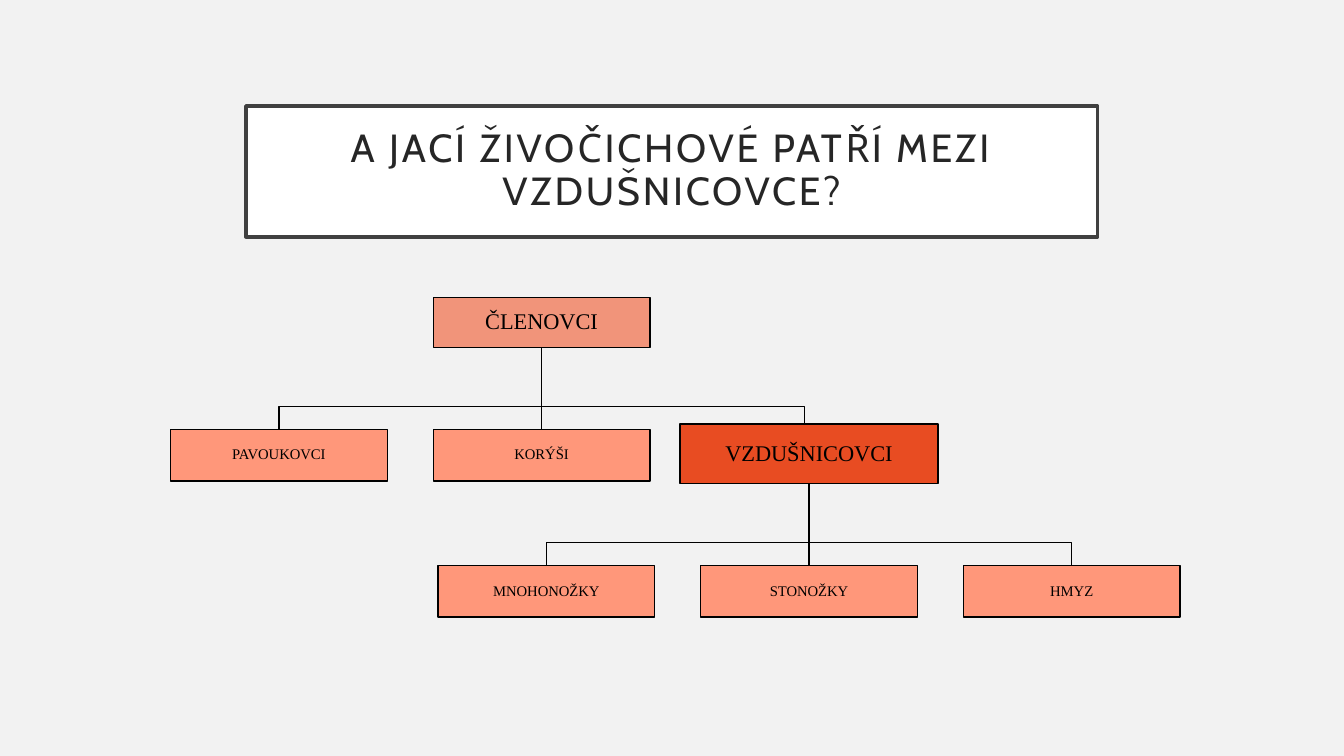
from pptx import Presentation
from pptx.dml.color import RGBColor
from pptx.enum.shapes import MSO_CONNECTOR, MSO_SHAPE
from pptx.enum.text import MSO_ANCHOR, MSO_AUTO_SIZE, PP_ALIGN
from pptx.oxml.ns import qn
from pptx.util import Cm, Pt
from lxml import etree

RECT = MSO_SHAPE.RECTANGLE
STRAIGHT = MSO_CONNECTOR.STRAIGHT
MIDDLE = MSO_ANCHOR.MIDDLE
CENTER = PP_ALIGN.CENTER
NO_FIT = MSO_AUTO_SIZE.NONE

TITLE = "A JACÍ ŽIVOČICHOVÉ PATŘÍ MEZI VZDUŠNICOVCE?"
TREES = [
    {"root": "ČLENOVCI", "fill": "F1947A", "center": 13.65, "top": 7.49,
     "size": (5.46, 1.27), "children": ["PAVOUKOVCI", "KORÝŠI", None]},
    {"root": "VZDUŠNICOVCI", "fill": "E84C22", "center": 20.39, "top": 10.69,
     "size": (6.5, 1.5), "children": ["MNOHONOŽKY", "STONOŽKY", "HMYZ"]},
]
CHILD_FILL = "FF977A"
CHILD_W, CHILD_H = 5.46, 1.3
STEP = 6.62
BUS_DROP, CHILD_DROP = 1.48, 2.06


def color(value):
    return RGBColor.from_string(value)


def style_line(line, value="000000", width=1):
    line.color.rgb = color(value)
    line.width = Pt(width)


def style_text(sp, text, font, size, value, inset):
    tf = sp.text_frame
    tf.word_wrap = True
    tf.auto_size = NO_FIT
    tf.vertical_anchor = MIDDLE
    tf.margin_left = tf.margin_right = Cm(inset)
    tf.margin_top = tf.margin_bottom = Cm(inset)
    p = tf.paragraphs[0]
    p.text = text
    p.alignment = CENTER
    p.line_spacing = 0.9
    p.font.name = font
    p.font.size = Pt(size)
    p.font.color.rgb = color(value)
    return p


def add_box(s, text, center, top, width, height, fill, size):
    sp = s.shapes.add_shape(RECT, Cm(center - width / 2), Cm(top), Cm(width), Cm(height))
    sp.shadow.inherit = False
    sp.fill.solid()
    sp.fill.fore_color.rgb = color(fill)
    style_line(sp.line)
    style_text(sp, text, "Times New Roman", size, "000000", 0.03)


def add_branch(s, x, child_x, y):
    if child_x == x:
        sp = s.shapes.add_connector(STRAIGHT, Cm(x), Cm(y), Cm(x), Cm(y + CHILD_DROP))
        etree.SubElement(sp._element.spPr, qn("a:effectLst"))
    else:
        bus = Cm(y + BUS_DROP)
        builder = s.shapes.build_freeform(Cm(x), Cm(y))
        builder.add_line_segments(
            [(Cm(x), bus), (Cm(child_x), bus), (Cm(child_x), Cm(y + CHILD_DROP))],
            close=False)
        sp = builder.convert_to_shape()
        sp.shadow.inherit = False
        sp.fill.background()
    style_line(sp.line)


def add_tree(s, tree):
    x, top = tree["center"], tree["top"]
    width, height = tree["size"]
    bottom = top + height
    children = [(name, x + (i - 1) * STEP) for i, name in enumerate(tree["children"])]
    for _, child_x in children:
        add_branch(s, x, child_x, bottom)
    add_box(s, tree["root"], x, top, width, height, tree["fill"], 16)
    for name, child_x in children:
        if name:
            add_box(s, name, child_x, bottom + CHILD_DROP, CHILD_W, CHILD_H, CHILD_FILL, 10.5)


def add_title(s):
    sp = s.shapes.title
    sp.left, sp.top, sp.width, sp.height = Cm(6.2), Cm(2.67), Cm(21.46), Cm(3.3)
    sp.fill.solid()
    sp.fill.fore_color.rgb = color("FFFFFF")
    style_line(sp.line, "404040", 2.5)
    p = style_text(sp, TITLE, "Cabin", 28, "262626", 0.51)
    p.runs[0]._r.get_or_add_rPr().set("spc", "200")


def main():
    prs = Presentation()
    prs.slide_width, prs.slide_height = Cm(33.87), Cm(19.05)
    s = prs.slides.add_slide(prs.slide_layouts[5])
    s.background.fill.solid()
    s.background.fill.fore_color.rgb = color("F2F2F2")
    add_title(s)
    for tree in TREES:
        add_tree(s, tree)
    prs.save("out.pptx")


if __name__ == "__main__":
    main()
